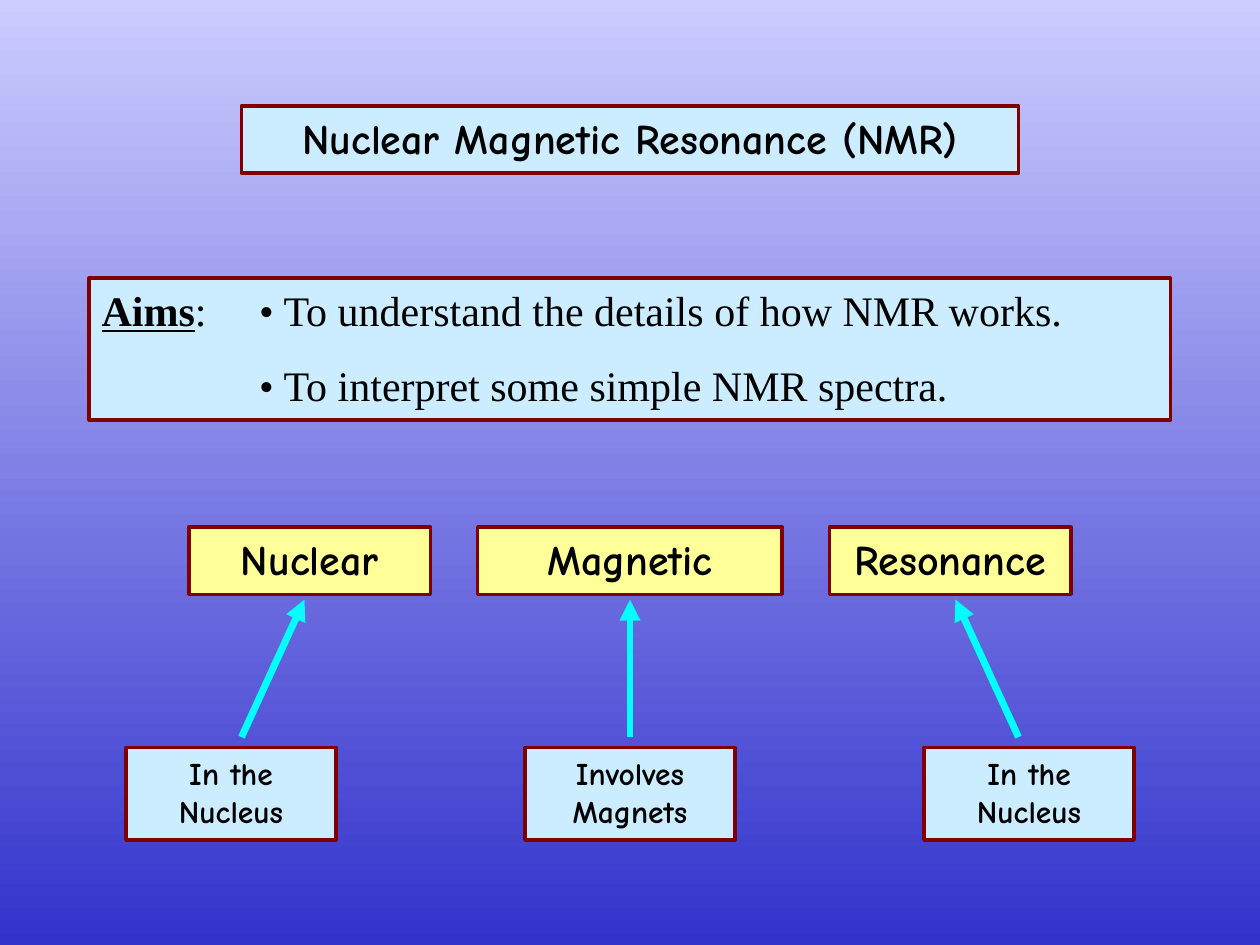
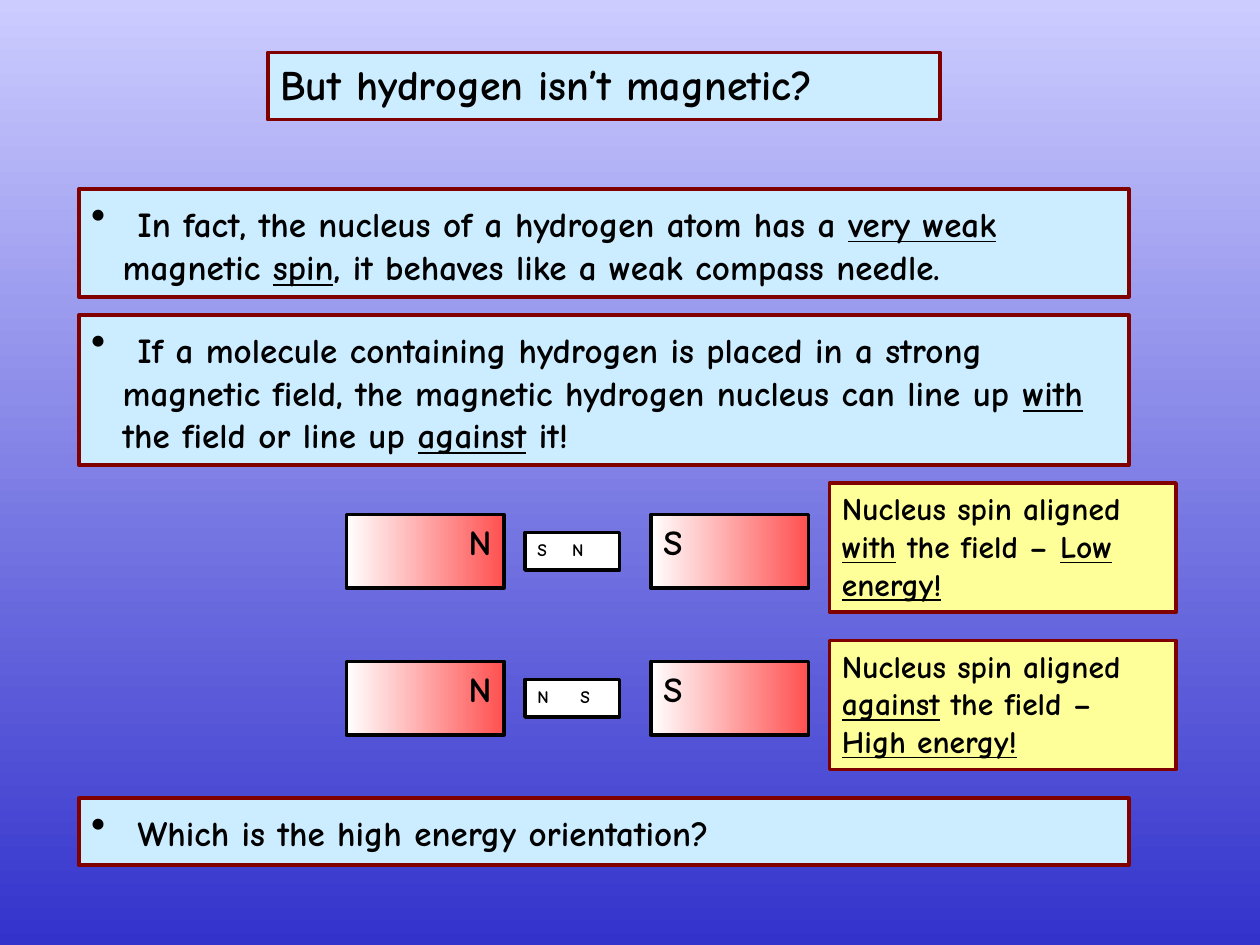
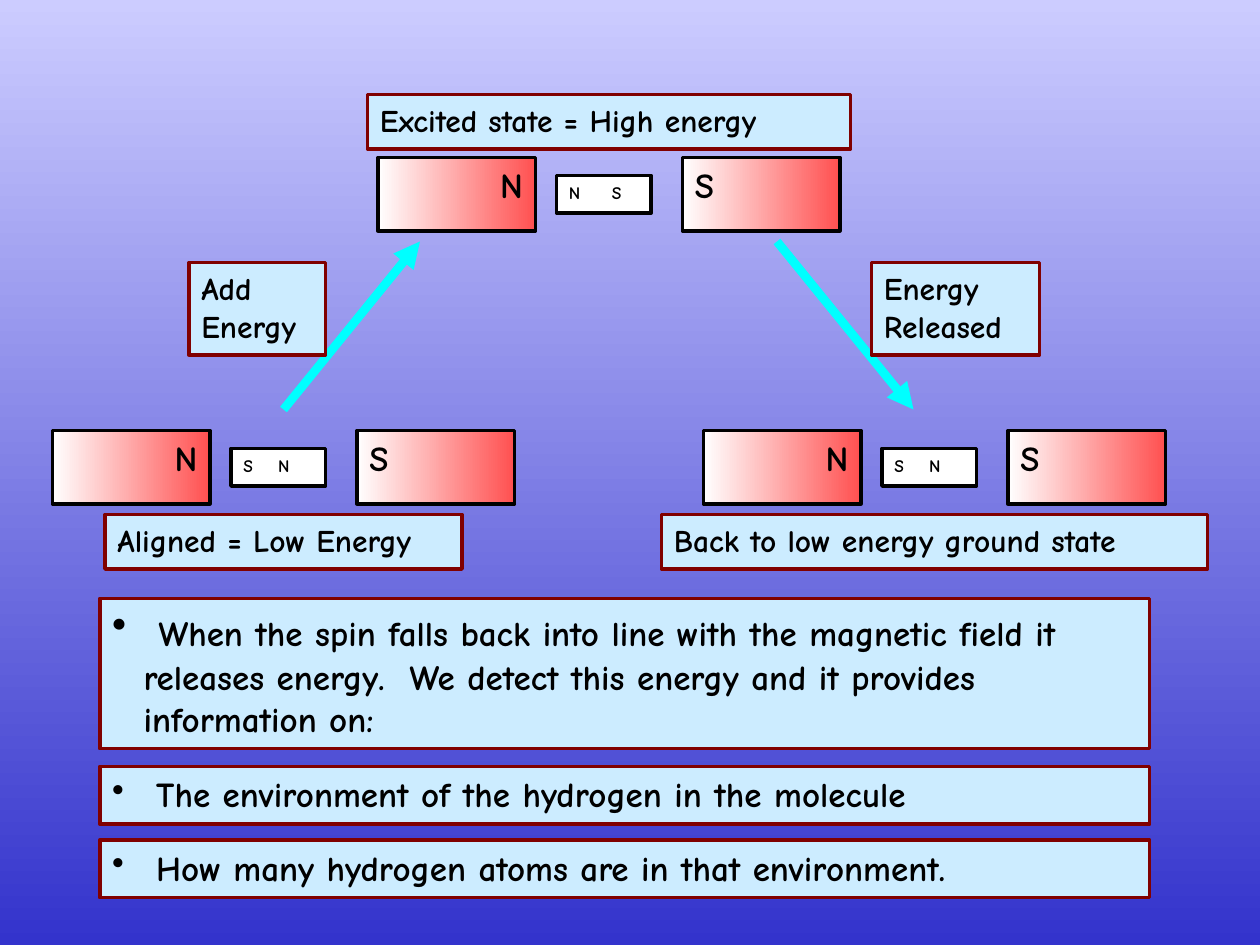
from lxml import etree
from pptx import Presentation
from pptx import util as u
from pptx.dml import color
from pptx.enum import shapes, text
from pptx.oxml import ns

EMU_PER_PX = 7620
WIDTH, HEIGHT = 1200, 900
COMIC, SERIF = "Comic Neue", "Times New Roman"
BLACK, WHITE = "000000", "FFFFFF"
PALE_BLUE, YELLOW, MAROON, CYAN = "CCECFF", "FFFF99", "800000", "00FFFF"
SKY = ("CCCCFF", "3333CC")
MAGNET = (WHITE, "FF5050")
TITLE, BODY, LABEL, POLE = 24, 20, 18, 10
LEFT, CENTER, RIGHT = text.PP_ALIGN.LEFT, text.PP_ALIGN.CENTER, text.PP_ALIGN.RIGHT
HANG = 30
WITH_FIELD, AGAINST_FIELD = ("S\tN", 33), ("N\tS", 41)


def px(value):
    return u.Emu(value * EMU_PER_PX)


def rgb(value):
    return color.RGBColor.from_string(value)


def paint(fill, colours, angle=0):
    if isinstance(colours, str):
        fill.solid()
        fill.fore_color.rgb = rgb(colours)
        return
    fill.gradient()
    fill.gradient_angle = angle
    for stop, colour in zip(fill.gradient_stops, colours):
        stop.color.rgb = rgb(colour)


def style(run, size, font=COMIC, bold=True, underline=False):
    run.font.name = font
    run.font.size = u.Pt(size)
    run.font.bold = bold
    run.font.underline = underline
    run.font.color.rgb = rgb(BLACK)


def write(paragraph, words, size):
    for index, part in enumerate(words.split("_")):
        if part:
            run = paragraph.add_run()
            run.text = part
            style(run, size, underline=index % 2 == 1)


def add_tab(paragraph, position):
    stops = etree.SubElement(paragraph._p.get_or_add_pPr(), ns.qn("a:tabLst"))
    etree.SubElement(stops, ns.qn("a:tab"), pos=str(px(position)), algn="l")


def panel(slide, box, words="", size=LABEL, fill=PALE_BLUE, outline=MAROON, align=LEFT):
    shape = slide.shapes.add_shape(shapes.MSO_SHAPE.RECTANGLE, *map(px, box))
    shape.shadow.inherit = False
    paint(shape.fill, fill)
    shape.line.color.rgb = rgb(outline)
    shape.line.width = u.Pt(2)
    frame = shape.text_frame
    frame.word_wrap = True
    frame.vertical_anchor = text.MSO_ANCHOR.TOP
    paragraph = frame.paragraphs[0]
    paragraph.alignment = align
    write(paragraph, words, size)
    return frame


def bullet_panel(slide, box, words, lead=TITLE):
    paragraph = panel(slide, box).paragraphs[0]
    write(paragraph, " ", lead)
    write(paragraph, words, BODY)
    properties = paragraph._p.get_or_add_pPr()
    properties.set("marL", str(px(HANG)))
    properties.set("indent", str(-px(HANG)))
    etree.SubElement(properties, ns.qn("a:buChar"), char="•")


def arrow(slide, start, end, width):
    line = slide.shapes.add_connector(
        shapes.MSO_CONNECTOR.STRAIGHT, *map(px, start + end))
    line.line.color.rgb = rgb(CYAN)
    line.line.width = u.Pt(width)
    etree.SubElement(line.line._get_or_add_ln(), ns.qn("a:tailEnd"), type="triangle")
    etree.SubElement(line._element.spPr, ns.qn("a:effectLst"))


def magnets(slide, left, top, spin):
    poles, gap = spin
    for offset, pole, align in ((0, "N", RIGHT), (290, "S", LEFT)):
        panel(slide, (left + offset, top, 150, 70), pole, BODY, MAGNET, BLACK, align)
    needle = panel(slide, (left + 170, top + 17, 90, 36), poles, POLE, WHITE, BLACK)
    add_tab(needle.paragraphs[0], gap)


def aims_panel(slide, box):
    frame = panel(slide, box)
    frame.text = ("Aims:\t• To understand the details of how NMR works.\n"
                  "\t• To interpret some simple NMR spectra.")
    first, second = frame.paragraphs
    heading, rest = "Aims", first.text.removeprefix("Aims")
    first.text = heading
    first.add_run().text = rest
    second.space_before = u.Pt(14)
    for paragraph in frame.paragraphs:
        paragraph.alignment = LEFT
        add_tab(paragraph, 150)
        for run in paragraph.runs:
            is_heading = run.text == heading
            style(run, TITLE, SERIF, is_heading, is_heading)


def new_slide(deck):
    slide = deck.slides.add_slide(deck.slide_layouts[6])
    paint(slide.background.fill, SKY, 270)
    return slide


def introduction(slide):
    panel(slide, (230, 101, 740, 64), "Nuclear Magnetic Resonance (NMR)", TITLE, align=CENTER)
    aims_panel(slide, (85, 265, 1030, 135))
    terms = (
        ("Nuclear", 180, 230, "In the Nucleus", 230, 290),
        ("Magnetic", 455, 290, "Involves Magnets", 600, 600),
        ("Resonance", 790, 230, "In the Nucleus", 970, 910),
    )
    for index, (term, left, width, meaning, start, end) in enumerate(terms):
        panel(slide, (left, 502, width, 64), term, TITLE, YELLOW, align=CENTER)
        panel(slide, (120 + 380 * index, 712, 200, 88), meaning, align=CENTER)
        arrow(slide, (start, 702), (end, 571), 4)


def hydrogen_spin(slide):
    panel(slide, (255, 50, 640, 64), "But hydrogen isn’t magnetic?", TITLE)
    facts = (
        (180, 103, "In fact, the nucleus of a hydrogen atom has a _very weak _magnetic "
                   "_spin_, it behaves like a weak compass needle."),
        (300, 143, "If a molecule containing hydrogen is placed in a strong magnetic field, "
                   "the magnetic hydrogen nucleus can line up _with_ the field or line up "
                   "_against_ it!"),
        (760, 64, "Which is the high energy orientation?"),
    )
    for top, height, fact in facts:
        bullet_panel(slide, (75, top, 1000, height), fact)
    orientations = (
        (490, WITH_FIELD, 460, "Nucleus spin aligned _with_ the field – _Low energy!_"),
        (630, AGAINST_FIELD, 610, "Nucleus spin aligned _against_ the field – _High energy!_"),
    )
    for top, spin, note_top, note in orientations:
        magnets(slide, 330, top, spin)
        panel(slide, (790, note_top, 330, 123), note, fill=YELLOW)


def energy_cycle(slide):
    states = (
        (360, 150, AGAINST_FIELD, (350, 90, 460, 52), "Excited state = High energy"),
        (50, 410, WITH_FIELD, (100, 490, 340, 52), "Aligned = Low Energy"),
        (670, 410, WITH_FIELD, (630, 490, 520, 52), "Back to low energy ground state"),
    )
    for left, top, spin, label_box, label in states:
        magnets(slide, left, top, spin)
        panel(slide, label_box, label)
    transitions = (
        ((270, 390), (400, 230), (180, 250, 130, 88), "Add Energy"),
        ((740, 230), (870, 390), (830, 250, 160, 88), "Energy Released"),
    )
    for start, end, label_box, label in transitions:
        arrow(slide, start, end, 5)
        panel(slide, label_box, label)
    findings = (
        (570, 143, TITLE, "When the spin falls back into line with the magnetic field it releases "
                          "energy.  We detect this energy and it provides information on:"),
        (730, 55, BODY, "The environment of the hydrogen in the molecule"),
        (800, 55, BODY, "How many hydrogen atoms are in that environment."),
    )
    for top, height, lead, finding in findings:
        bullet_panel(slide, (95, top, 1000, height), finding, lead)


def main():
    deck = Presentation()
    deck.slide_width, deck.slide_height = px(WIDTH), px(HEIGHT)
    for build in (introduction, hydrogen_spin, energy_cycle):
        build(new_slide(deck))
    deck.save("out.pptx")


if __name__ == "__main__":
    main()
